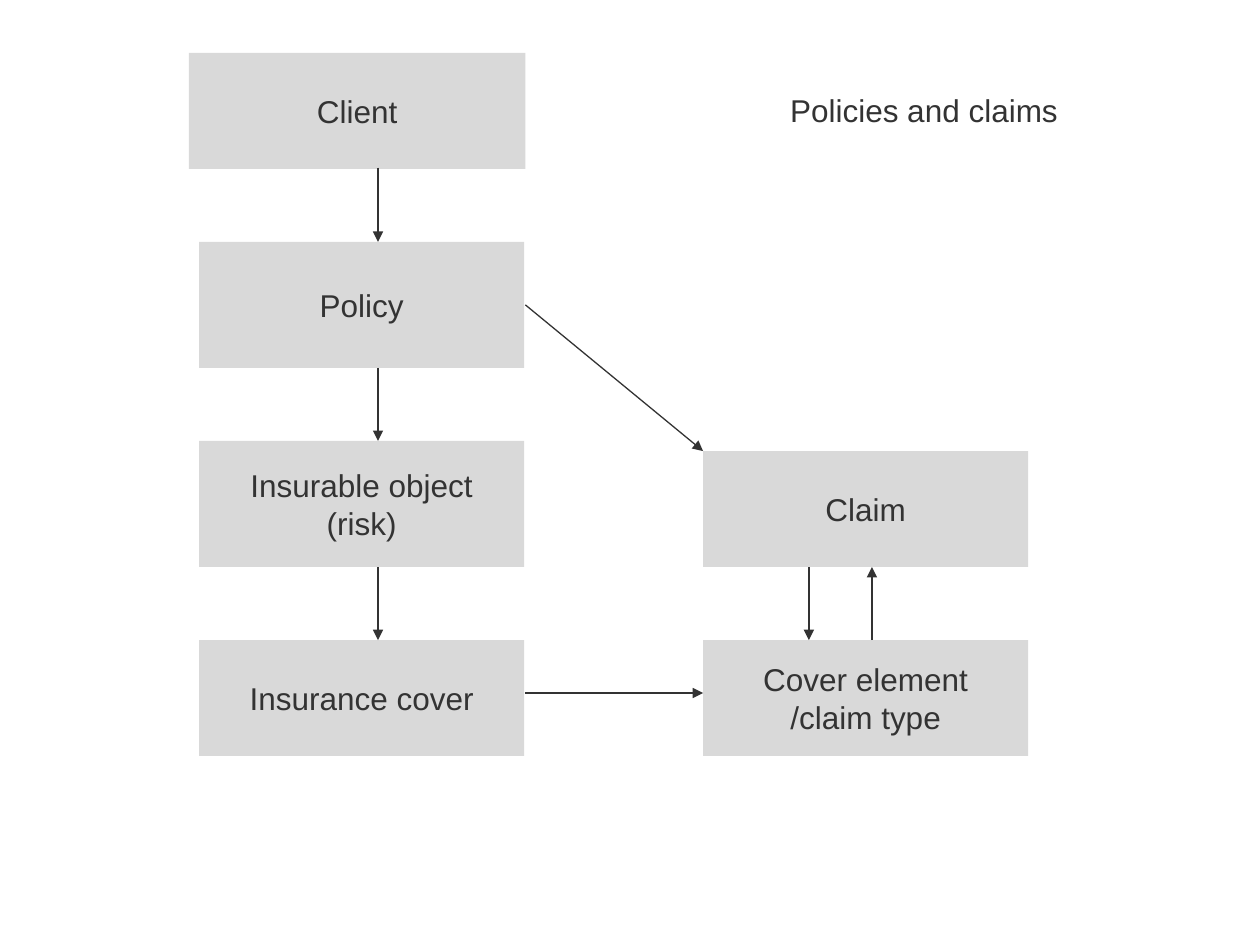
from lxml.etree import SubElement
from pptx import Presentation
from pptx.dml.color import RGBColor
from pptx.enum.shapes import MSO_CONNECTOR, MSO_SHAPE
from pptx.enum.text import MSO_ANCHOR, MSO_AUTO_SIZE, PP_ALIGN
from pptx.oxml.ns import qn
from pptx.util import Inches, Pt

INK = RGBColor(0x33, 0x33, 0x33)
GREY = RGBColor(0xD9, 0xD9, 0xD9)
FONT = {"name": "Arial", "size": Pt(18), "bold": False}


def write(tf, lines, align):
    for i, line in enumerate(lines):
        p = tf.paragraphs[0] if i == 0 else tf.add_paragraph()
        p.alignment = align
        r = p.add_run()
        r.text = line
        for key, value in FONT.items():
            setattr(r.font, key, value)
        r.font.color.rgb = INK


prs = Presentation()
prs.slide_width, prs.slide_height = Inches(10), Inches(7.5)
s = prs.slides.add_slide(prs.slide_layouts[5])

title = s.shapes.title
title.left, title.top = Inches(6.17), Inches(0.67)
title.width, title.height = Inches(3.5), Inches(0.5)
tf = title.text_frame
tf.word_wrap = True
tf.auto_size = MSO_AUTO_SIZE.NONE
tf.vertical_anchor = MSO_ANCHOR.TOP
write(tf, ["Policies and claims"], PP_ALIGN.LEFT)

LEFT, RIGHT, WIDTH = 1.58, 5.58, 2.58
boxes = [
    (["Client"], 1.5, 0.42, 2.67, 0.92),
    (["Policy"], LEFT, 1.92, WIDTH, 1),
    (["Insurable object", "(risk)"], LEFT, 3.5, WIDTH, 1),
    (["Insurance cover"], LEFT, 5.08, WIDTH, 0.92),
    (["Cover element", "/claim type"], RIGHT, 5.08, WIDTH, 0.92),
    (["Claim"], RIGHT, 3.58, WIDTH, 0.92),
]
for lines, *box in boxes:
    sp = s.shapes.add_shape(MSO_SHAPE.RECTANGLE, *map(Inches, box))
    sp.shadow.inherit = False
    sp.fill.solid()
    sp.fill.fore_color.rgb = GREY
    sp.line.fill.background()
    tf = sp.text_frame
    tf.word_wrap = False
    tf.vertical_anchor = MSO_ANCHOR.MIDDLE
    write(tf, lines, PP_ALIGN.CENTER)

arrows = [
    (3, 1.33, 3, 1.92),
    (3, 2.92, 3, 3.5),
    (3, 4.5, 3, 5.08),
    (4.17, 5.5, RIGHT, 5.5),
    (6.42, 4.5, 6.42, 5.08),
    (6.92, 5.08, 6.92, 4.5),
    (4.17, 2.42, RIGHT, 3.58),
]
for ends in arrows:
    arrow = s.shapes.add_connector(MSO_CONNECTOR.STRAIGHT, *map(Inches, ends))
    arrow.line.color.rgb = INK
    arrow.line.width = Pt(0.75)
    SubElement(arrow.line._get_or_add_ln(), qn("a:tailEnd"), type="triangle")
    SubElement(arrow._element.spPr, qn("a:effectLst"))

prs.save("out.pptx")
